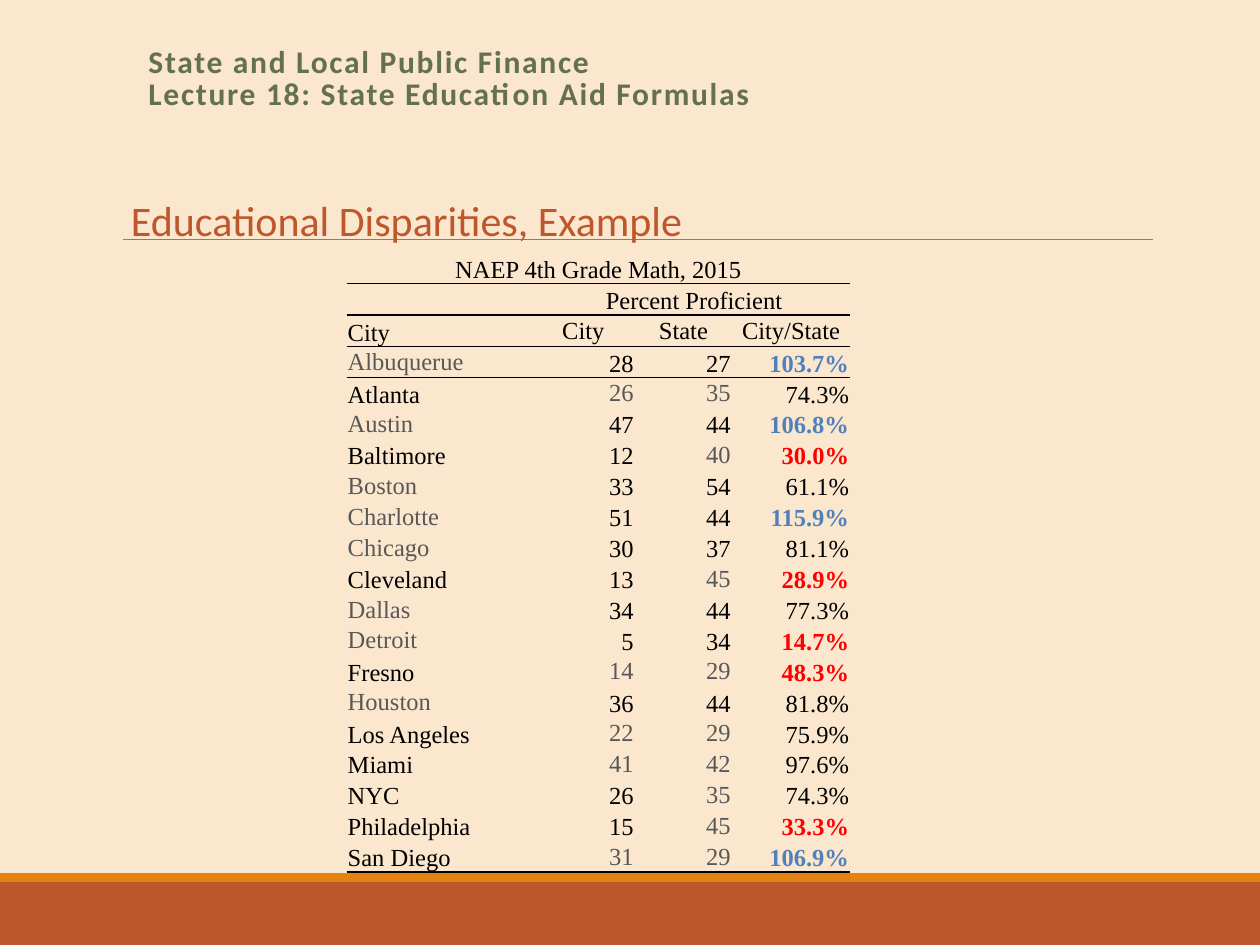
from lxml import etree
from pptx import Presentation
from pptx.dml.color import RGBColor
from pptx.enum.shapes import MSO_CONNECTOR, MSO_SHAPE
from pptx.enum.text import MSO_ANCHOR, PP_ALIGN
from pptx.oxml.ns import qn
from pptx.util import Inches, Pt

BLACK, GRAY, BLUE, RED = "000000", "585858", "4F81BD", "FF0000"
ORANGE, RUST, GREEN, CREAM = "E48312", "BD582C", "637052", "FBE6CE"
NO_STYLE = "{2D5ABB26-0587-4C30-8999-92F81FD0307C}"

# City, city percent, state percent, indexes of the gray columns
SCORES = [
    ("Albuquerue", 28, 27, [0]),
    ("Atlanta", 26, 35, [1, 2]),
    ("Austin", 47, 44, [0]),
    ("Baltimore", 12, 40, [2]),
    ("Boston", 33, 54, [0]),
    ("Charlotte", 51, 44, [0]),
    ("Chicago", 30, 37, [0]),
    ("Cleveland", 13, 45, [2]),
    ("Dallas", 34, 44, [0]),
    ("Detroit", 5, 34, [0]),
    ("Fresno", 14, 29, [1, 2]),
    ("Houston", 36, 44, [0]),
    ("Los Angeles", 22, 29, [1, 2]),
    ("Miami", 41, 42, [1, 2]),
    ("NYC", 26, 35, [2]),
    ("Philadelphia", 15, 45, [2]),
    ("San Diego", 31, 29, [1, 2]),
]


def rgb(value):
    return RGBColor.from_string(value)


def set_attrs(obj, values):
    for name, value in values.items():
        setattr(obj, name, value)


def add_run(p, text, color, **font):
    r = p.add_run()
    r.text = text
    set_attrs(r.font, font)
    r.font.color.rgb = rgb(color)
    return r


def add_band(s, x, y, w, h, color):
    sp = s.shapes.add_shape(MSO_SHAPE.RECTANGLE, Inches(x), Inches(y), Inches(w), Inches(h))
    sp.shadow.inherit = False
    sp.fill.solid()
    sp.fill.fore_color.rgb = rgb(color)
    sp.line.fill.background()


def add_background(s, w, h):
    s.background.fill.solid()
    s.background.fill.fore_color.rgb = rgb(CREAM)
    # Footer bands
    add_band(s, 0, h - 0.5, w, 0.5, RUST)
    add_band(s, 0, h - 0.57, w, 0.07, ORANGE)
    # Rule under the heading
    line = s.shapes.add_connector(MSO_CONNECTOR.STRAIGHT, Inches(0.98), Inches(1.9),
                                  Inches(9.15), Inches(1.9))
    line.line.color.rgb = rgb("808080")
    line.line.width = Pt(0.5)
    etree.SubElement(line._element.spPr, qn("a:effectLst"))


def add_text_box(s, x, y, w, h, wrap):
    tf = s.shapes.add_textbox(Inches(x), Inches(y), Inches(w), Inches(h)).text_frame
    tf.word_wrap = wrap
    return tf.paragraphs[0]


def add_course_title(s, x, y, w, h):
    p = add_text_box(s, x, y, w, h, True)
    p.line_spacing = 0.85
    font = {"size": Pt(18), "name": "Calibri", "bold": True}
    lines = ["State and Local Public Finance", "Lecture 18: State Education Aid Formulas"]
    for i, text in enumerate(lines):
        if i:
            p.add_line_break()
        r = add_run(p, text, GREEN, **font)
        r.font._element.set("spc", "100")


def add_heading(s, x, y, w, h):
    p = add_text_box(s, x, y, w, h, False)
    set_attrs(p, {"line_spacing": 0.9, "space_before": Pt(6.8), "space_after": Pt(1.1)})
    pPr = p._p.get_or_add_pPr()
    pPr.set("marL", str(Inches(0.06)))
    pPr.set("indent", str(Inches(-0.06)))
    add_run(p, "Educational Disparities, Example", RUST, size=Pt(24), name="Calibri")


def add_border(cell, side):
    ln = etree.SubElement(cell._tc.get_or_add_tcPr(), qn(f"a:{side}"), w=str(Pt(1)))
    fill = etree.SubElement(ln, qn("a:solidFill"))
    etree.SubElement(fill, qn("a:srgbClr"), val=BLACK)


def write_cell(cell, text, align=PP_ALIGN.CENTER, anchor=MSO_ANCHOR.BOTTOM,
               color=BLACK, bold=False):
    cell.vertical_anchor = anchor
    p = cell.text_frame.paragraphs[0]
    p.alignment = align
    add_run(p, text, color, size=Pt(14), name="Times New Roman", bold=bold)


def write_score_row(table, row, city, local, state, gray):
    ratio = local / state
    for col, text in enumerate([city, str(local), str(state)]):
        muted = col in gray
        write_cell(table.cell(row, col), text,
                   align=PP_ALIGN.RIGHT if col else PP_ALIGN.LEFT,
                   anchor=MSO_ANCHOR.MIDDLE if muted else MSO_ANCHOR.BOTTOM,
                   color=GRAY if muted else BLACK)
    # Blue above the state level, red below half of it
    color = BLUE if ratio > 1 else RED if ratio < 0.5 else BLACK
    write_cell(table.cell(row, 3), f"{ratio:.1%}", align=PP_ALIGN.RIGHT,
               color=color, bold=color != BLACK)


def add_score_table(s, x, y, w, h):
    heads = 3
    count = heads + len(SCORES)
    frame = s.shapes.add_table(count, 4, Inches(x), Inches(y), Inches(w), Inches(h))
    table = frame.table
    set_attrs(table, {"first_row": False, "horz_banding": False})
    table._tbl.tblPr.find(qn("a:tableStyleId")).text = NO_STYLE
    for col, width in zip(table.columns, [1.52, 0.77, 0.77, w - 3.06]):
        col.width = Inches(width)
    for i, row in enumerate(table.rows):
        row.height = Inches(0.25 if i < heads else (h - 0.25 * heads) / len(SCORES))

    # Horizontal rules: row above the rule and its first column
    for row, first in {0: 0, 1: 1, 2: 0, count - 1: 0}.items():
        for col in range(first, 4):
            add_border(table.cell(row, col), "lnB")
            if row + 1 < count:
                add_border(table.cell(row + 1, col), "lnT")

    edge = Inches(0.01)
    for cell in table.iter_cells():
        set_attrs(cell, {"margin_left": edge, "margin_right": edge,
                         "margin_top": edge, "margin_bottom": 0})
        cell.fill.background()

    # Header rows
    table.cell(0, 0).merge(table.cell(0, 3))
    table.cell(1, 1).merge(table.cell(1, 3))
    write_cell(table.cell(0, 0), "NAEP 4th Grade Math, 2015")
    write_cell(table.cell(1, 1), "Percent Proficient")
    write_cell(table.cell(2, 0), "City", align=PP_ALIGN.LEFT)
    for col, text in enumerate(["City ", "State", "City/State"], 1):
        write_cell(table.cell(2, col), text, anchor=MSO_ANCHOR.MIDDLE)

    for row, score in enumerate(SCORES, heads):
        write_score_row(table, row, *score)

    # Keep empty cells from stretching their rows
    for cell in table.iter_cells():
        p = cell.text_frame.paragraphs[0]
        if not p.runs:
            etree.SubElement(p._p, qn("a:endParaRPr"), sz="1400")


def main():
    prs = Presentation()
    prs.slide_width, prs.slide_height = Inches(10), Inches(7.5)
    s = prs.slides.add_slide(prs.slide_layouts[6])
    add_background(s, 10, 7.5)
    add_course_title(s, 1.08, 0.33, 8.25, 0.65)
    add_heading(s, 0.94, 1.54, 4.62, 0.46)
    add_score_table(s, 2.75, 2, 4, 4.92)
    prs.save("out.pptx")


if __name__ == "__main__":
    main()
